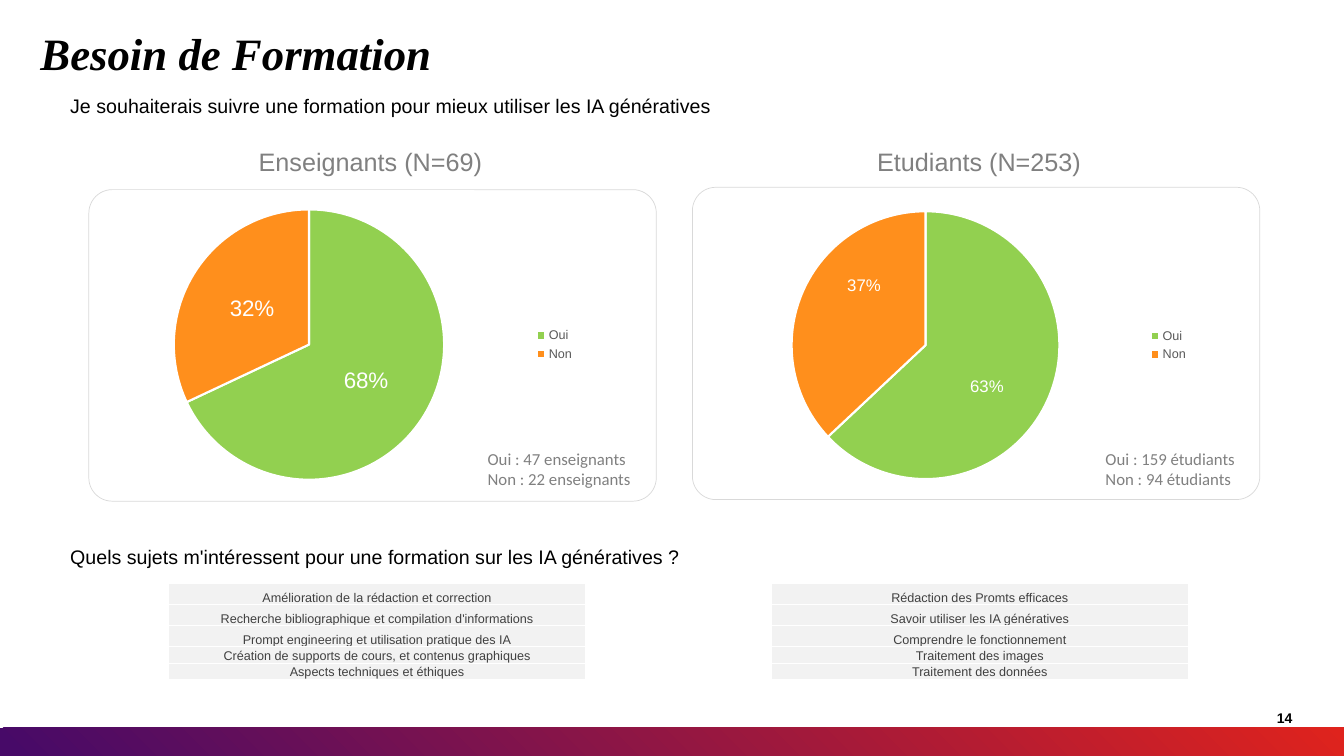
from lxml.etree import SubElement
from pptx import Presentation
from pptx.chart.data import CategoryChartData
from pptx.dml.color import RGBColor
from pptx.enum.chart import XL_CHART_TYPE, XL_LABEL_POSITION, XL_LEGEND_POSITION
from pptx.enum.shapes import MSO_SHAPE
from pptx.enum.text import MSO_ANCHOR, MSO_AUTO_SIZE, PP_ALIGN
from pptx.oxml import parse_xml
from pptx.oxml.ns import nsdecls, qn
from pptx.util import Cm, Pt

HUES = {
    "black": "000000", "white": "FFFFFF", "grey": "808080", "dark": "404040",
    "key": "595959", "pale": "F2F2F2", "edge": "D9D9D9",
    "yes": "92D050", "no": "FF8F1C", "red": "DF231D", "plum": "470A68",
}
FONTS = {
    "title": {"name": "Times New Roman", "size": Pt(32), "bold": True, "italic": True},
    "lead": {"name": "Arial", "size": Pt(14)},
    "head": {"name": "Arial", "size": Pt(18)},
    "note": {"name": "Calibri", "size": Pt(12)},
    "page": {"name": "Arial", "size": Pt(10), "bold": True},
    "cell": {"name": "Arial", "size": Pt(9)},
    "chart": {"name": "Arial", "size": Pt(10)},
    "big": {"name": "Arial", "size": Pt(16)},
    "small": {"name": "Arial", "size": Pt(12)},
}
FLUSH = {"margin_left": 0, "margin_right": 0, "margin_top": 0, "margin_bottom": 0}
CELL = {"margin_left": Cm(0.03), "margin_right": Cm(0.03), "margin_top": Cm(0.03),
        "margin_bottom": 0, "vertical_anchor": MSO_ANCHOR.BOTTOM}
ROWS = [0.53, 0.53, 0.53, 0.41, 0.38]
PLOT = {"x": 0.18, "y": 0.05, "w": 0.54, "h": 0.9}
GROUPS = [
    {
        "head": ("Enseignants (N=69)", 6.27, PP_ALIGN.LEFT),
        "note": ("Oui : 47 enseignants\nNon : 22 enseignants", 12.04),
        "frame": (2.24, 4.78, 14.3, 7.85),
        "pie": ((2.11, 4.9, 12.62, 7.57), (68, 32), "big", ()),
        "topics": (4.24, [
            "Amélioration de la rédaction et correction",
            "Recherche bibliographique et compilation d'informations",
            "Prompt engineering et utilisation pratique des IA",
            "Création de supports de cours, et contenus graphiques",
            "Aspects techniques et éthiques",
        ]),
    },
    {
        "head": ("Etudiants (N=253)", 21.36, PP_ALIGN.CENTER),
        "note": ("Oui : 159 étudiants\nNon : 94 étudiants", 27.61),
        "frame": (17.45, 4.72, 14.3, 7.87),
        "pie": ((17.7, 4.93, 12.5, 7.54), (63, 37), "small", (0.05, -0.11)),
        "topics": (19.43, [
            "Rédaction des Promts efficaces",
            "Savoir utiliser les IA génératives",
            "Comprendre le fonctionnement",
            "Traitement des images",
            "Traitement des données",
        ]),
    },
]


def tint(name):
    """Return the named colour."""
    return RGBColor.from_string(HUES[name])


def apply(item, form):
    """Set each format value on the item."""
    for key, val in form.items():
        setattr(item, key, val)


def style(font, kind, hue):
    """Give a font its format and colour."""
    apply(font, FONTS[kind])
    font.color.rgb = tint(hue)


def add_text(slide, text, box, kind, hue="black", align=PP_ALIGN.LEFT, form=None, space=None):
    """Add a text box with one paragraph per line."""
    frame = slide.shapes.add_textbox(*map(Cm, box)).text_frame
    apply(frame, {"word_wrap": True, "text": text, **(form or {})})
    for para in frame.paragraphs:
        apply(para, {"alignment": align, "line_spacing": space})
        style(para.font, kind, hue)


def add_bar(slide):
    """Add the gradient bar along the foot of the slide."""
    bar = slide.shapes.add_shape(MSO_SHAPE.RECTANGLE, 0, Cm(18.34), Cm(33.87), Cm(0.71))
    bar.shadow.inherit = False
    bar.line.fill.background()
    bar.element.spPr.insert(2, parse_xml(
        f'<a:gradFill {nsdecls("a")}><a:gsLst>'
        f'<a:gs pos="0"><a:srgbClr val="{HUES["red"]}"/></a:gs>'
        f'<a:gs pos="99000"><a:srgbClr val="{HUES["plum"]}"/></a:gs></a:gsLst>'
        '<a:path path="circle"><a:fillToRect l="100000" b="100000"/></a:path></a:gradFill>'))


def add_frame(slide, box):
    """Add a rounded outline."""
    frame = slide.shapes.add_shape(MSO_SHAPE.ROUNDED_RECTANGLE, *map(Cm, box))
    frame.adjustments[0] = 0.075
    frame.shadow.inherit = False
    frame.fill.background()
    frame.line.color.rgb = tint("edge")
    frame.line.width = Pt(0.5)


def set_place(owner, index, spots, inner=False):
    """Give a chart part a manual layout."""
    for old in owner.findall(qn("c:layout")):
        owner.remove(old)
    place = parse_xml(f'<c:layout {nsdecls("c")}><c:manualLayout/></c:layout>')
    if inner:
        SubElement(place[0], qn("c:layoutTarget"), val="inner")
        for mode in ("xMode", "yMode"):
            SubElement(place[0], qn(f"c:{mode}"), val="edge")
    for key, val in spots.items():
        SubElement(place[0], qn(f"c:{key}"), val=str(val))
    owner.insert(index, place)


def add_pie(slide, box, vals, kind, shifts):
    """Add a pie chart with percent labels."""
    data = CategoryChartData()
    data.categories = ["Oui", "Non"]
    data.add_series("Series 1", vals)
    chart = slide.shapes.add_chart(XL_CHART_TYPE.PIE, *map(Cm, box), data).chart
    chart.has_title = False
    style(chart.font, "chart", "black")
    chart.has_legend = True
    apply(chart.legend, {"position": XL_LEGEND_POSITION.RIGHT, "include_in_layout": False})
    style(chart.legend.font, "cell", "key")
    plot = chart.plots[0]
    plot.vary_by_categories = True
    series = plot.series[0]
    labels = series.data_labels
    apply(labels, {"show_percentage": True, "show_value": False,
                   "position": XL_LABEL_POSITION.CENTER})
    style(labels.font, kind, "white")
    for index, hue in enumerate(("yes", "no")):
        form = series.points[index].format
        form.fill.solid()
        form.fill.fore_color.rgb = tint(hue)
        form.line.color.rgb = tint("white")
        form.line.width = Pt(1.5)
    for index, shift in enumerate(shifts):
        label = series.points[index].data_label
        style(label.font, kind, "white")
        label.position = XL_LABEL_POSITION.CENTER
    for node, shift in zip(chart.element.iter(qn("c:dLbl")), shifts):
        node.find(qn("c:showVal")).set("val", "0")
        node.find(qn("c:showPercent")).set("val", "1")
        set_place(node, 1, {"x": 0, "y": shift})
    set_place(next(chart.element.iter(qn("c:plotArea"))), 0, PLOT, True)


def add_list(slide, left, topics):
    """Add a table of one topic per row."""
    shape = slide.shapes.add_table(
        len(topics), 1, Cm(left), Cm(14.71), Cm(10.52), Cm(sum(ROWS)))
    table = shape.table
    apply(table, {"first_row": False, "horz_banding": False})
    for row, tall, topic in zip(table.rows, ROWS, topics):
        row.height = Cm(tall)
        cell = row.cells[0]
        apply(cell, {"text": topic, **CELL})
        cell.fill.solid()
        cell.fill.fore_color.rgb = tint("pale")
        para = cell.text_frame.paragraphs[0]
        para.alignment = PP_ALIGN.CENTER
        style(para.font, "cell", "dark")
    for node in shape.element.iter(qn("a:tcPr")):
        for index, side in enumerate("LRTB"):
            node.insert(index, parse_xml(
                f'<a:ln{side} {nsdecls("a")} w="12700"><a:solidFill>'
                f'<a:srgbClr val="{HUES["white"]}"/></a:solidFill></a:ln{side}>'))


def main():
    """Build the slide and save it."""
    deck = Presentation()
    apply(deck, {"slide_width": Cm(33.87), "slide_height": Cm(19.05)})
    slide = deck.slides.add_slide(deck.slide_layouts[6])
    add_bar(slide)
    add_text(slide, "14", (31.5, 17.58, 1.07, 1.02), "page", align=PP_ALIGN.RIGHT,
             form={**FLUSH, "vertical_anchor": MSO_ANCHOR.MIDDLE})
    add_text(slide, "Besoin de Formation", (1.02, 0.79, 31.27, 2.57), "title",
             form=FLUSH, space=0.9)
    loose = {"word_wrap": False, "auto_size": MSO_AUTO_SIZE.SHAPE_TO_FIT_TEXT}
    add_text(slide, "Je souhaiterais suivre une formation pour mieux utiliser les IA génératives",
             (1.52, 2.24, 17.02, 0.86), "lead", form=loose)
    add_text(slide, "Quels sujets m'intéressent pour une formation sur les IA génératives ?",
             (1.52, 13.61, 15.95, 0.86), "lead", form=loose)
    for group in GROUPS:
        add_pie(slide, *group["pie"])
        add_frame(slide, group["frame"])
        text, left, align = group["head"]
        add_text(slide, text, (left, 3.56, 6.63, 1.02), "head", "grey", align)
        text, left = group["note"]
        add_text(slide, text, (left, 11.18, 4.39, 1.27), "note", "grey")
        add_list(slide, *group["topics"])
    deck.save("out.pptx")


if __name__ == "__main__":
    main()
